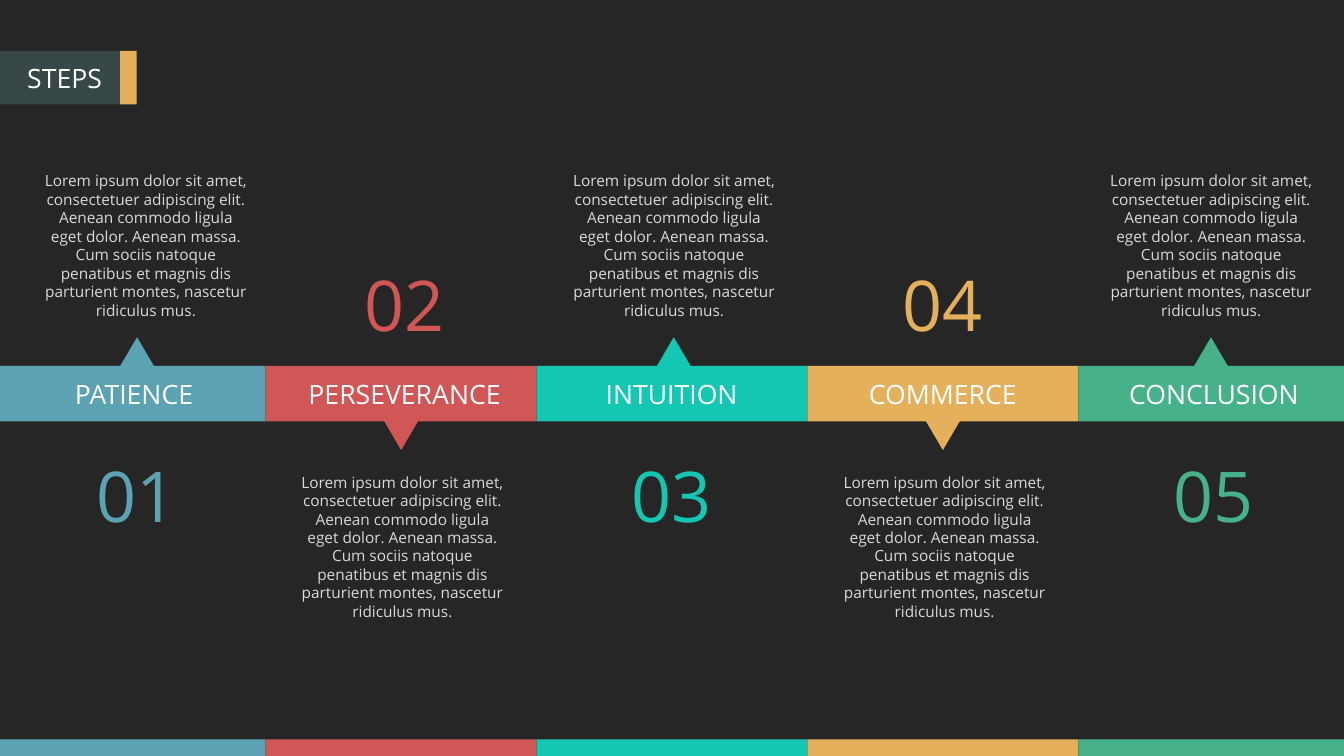
"""Build a five-step timeline slide with alternating descriptions and numbers."""
from dataclasses import dataclass
from itertools import pairwise

from pptx import Presentation
from pptx.dml.color import RGBColor
from pptx.enum.shapes import MSO_SHAPE
from pptx.enum.text import MSO_ANCHOR, MSO_AUTO_SIZE, PP_ALIGN
from pptx.util import Inches, Pt


@dataclass(frozen=True)
class Theme:
    font: str = "Open Sans"
    background: str = "262626"
    tab: str = "384849"
    accent: str = "E5B05C"
    heading: str = "FFFFFF"
    body: str = "D9D9D9"
    steps: tuple = ("5BA2B2", "D15656", "13C7B2", "E5B05C", "47B289")
    heading_size: int = 38
    number_size: int = 100
    body_size: int = 22


theme = Theme()
deck = Presentation()
deck.slide_width = Inches(26.67)
deck.slide_height = Inches(15)
page = deck.slides.add_slide(deck.slide_layouts[5])
page.background.fill.solid()
page.background.fill.fore_color.rgb = RGBColor.from_string(theme.background)


def add_block(kind, left, top, width, height, color):
    block = page.shapes.add_shape(kind, Inches(left), Inches(top), Inches(width), Inches(height))
    block.shadow.inherit = False
    block.fill.solid()
    block.fill.fore_color.rgb = RGBColor.from_string(color)
    block.line.fill.background()
    return block


def write_text(box, text, size, color, alignment=PP_ALIGN.CENTER):
    frame = box.text_frame
    frame.word_wrap = True
    frame.auto_size = MSO_AUTO_SIZE.SHAPE_TO_FIT_TEXT
    frame.vertical_anchor = MSO_ANCHOR.TOP
    para = frame.paragraphs[0]
    para.alignment = alignment
    span = para.add_run()
    span.text = text
    span.font.name = theme.font
    span.font.size = Pt(size)
    span.font.color.rgb = RGBColor.from_string(color)


add_block(MSO_SHAPE.RECTANGLE, 0, 1.01, 2.37, 1.06, theme.tab)
add_block(MSO_SHAPE.RECTANGLE, 2.38, 1.01, 0.33, 1.06, theme.accent)

title = page.shapes.title
title.left, title.top = Inches(0.44), Inches(1.17)
title.width, title.height = Inches(1.93), Inches(0.74)
write_text(title, "STEPS", theme.heading_size, theme.heading, PP_ALIGN.LEFT)
title.element.getparent().append(title.element)

description = (
    "Lorem ipsum dolor sit amet, consectetuer adipiscing elit. Aenean commodo ligula "
    "eget dolor. Aenean massa. Cum sociis natoque penatibus et magnis dis parturient "
    "montes, nascetur ridiculus mus."
)
band_edges = [0, 5.27, 10.65, 16.02, 21.4, 26.67]
# Columns: name, then left edges of label, number, pointer and description.
steps = [
    ("PATIENCE", 0.48, 0.76, 2.38, 0.76),
    ("PERSEVERANCE", 5.85, 6.08, 7.62, 5.85),
    ("INTUITION", 11.15, 11.38, 13.03, 11.24),
    ("COMMERCE", 16.53, 16.76, 18.37, 16.61),
    ("CONCLUSION", 21.91, 22.14, 23.69, 21.9),
]

for index, (step, color, edges) in enumerate(zip(steps, theme.steps, pairwise(band_edges))):
    name, label_left, number_left, pointer_left, description_left = step
    left, right = edges
    points_up = index % 2 == 0
    for top, height in ((14.67, 0.33), (7.26, 1.1)):
        add_block(MSO_SHAPE.RECTANGLE, left, top, right - left, height, color)

    pointer_top = 6.69 if points_up else 8.35
    pointer = add_block(MSO_SHAPE.ISOSCELES_TRIANGLE, pointer_left, pointer_top, 0.68, 0.58, color)
    pointer.rotation = 0 if points_up else 180

    number_top = 8.92 if points_up else 5.14
    description_top = 3.35 if points_up else 9.33
    texts = [
        (name, label_left, 7.44, 4.36, 0.74, theme.heading_size, theme.heading),
        (f"{index + 1:02}", number_left, number_top, 3.9, 1.78, theme.number_size, color),
        (description, description_left, description_top, 4.27, 3.06, theme.body_size, theme.body),
    ]
    for text, text_left, top, width, height, size, text_color in texts:
        box = page.shapes.add_textbox(Inches(text_left), Inches(top), Inches(width), Inches(height))
        write_text(box, text, size, text_color)

deck.save("out.pptx")
